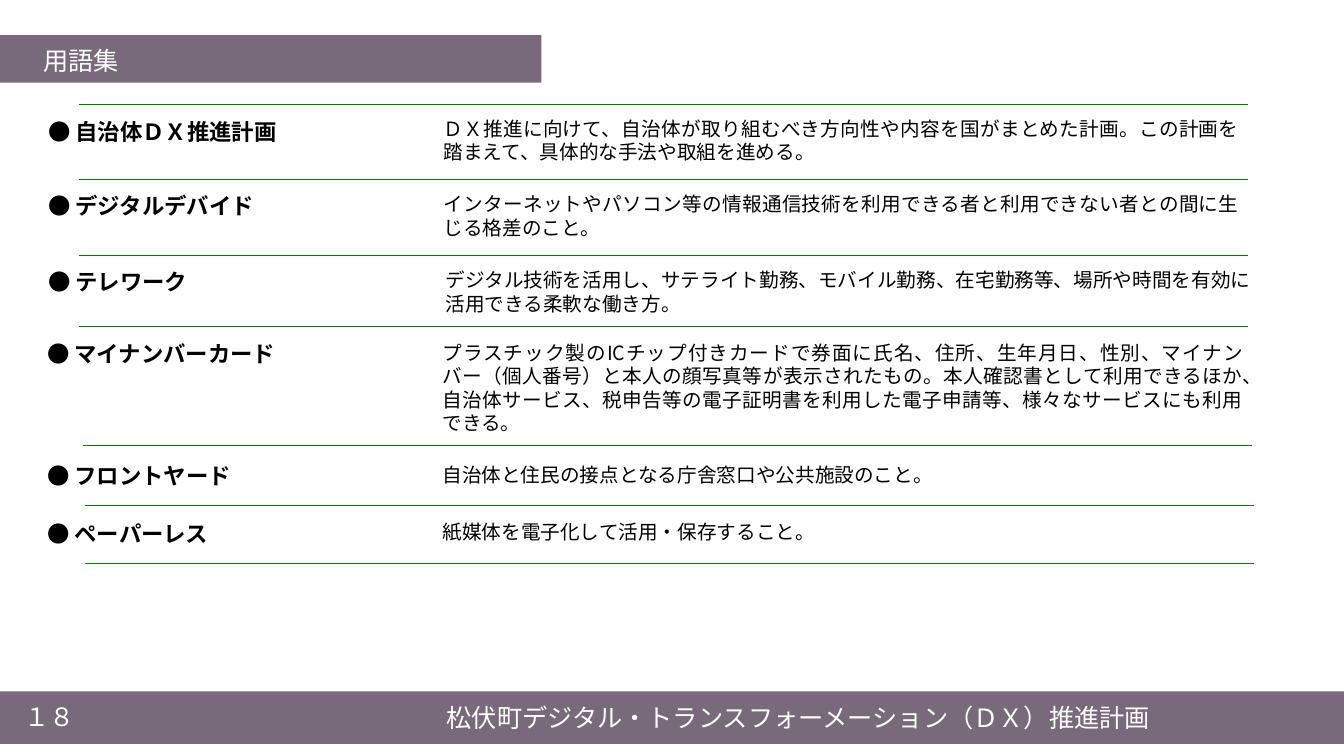
from lxml import etree
from pptx import Presentation
from pptx.dml.color import RGBColor
from pptx.enum.lang import MSO_LANGUAGE_ID as Language
from pptx.enum.shapes import MSO_CONNECTOR as Connector, MSO_SHAPE as Shape
from pptx.enum.text import MSO_ANCHOR as Anchor, MSO_AUTO_SIZE as AutoSize, PP_ALIGN as Align
from pptx.oxml.ns import qn
from pptx.util import Inches, Pt

FONT = "Noto Sans CJK JP"
COLORS = {"bar": "78697B", "rule": "008000", "text": "000000", "light": "FFFFFF"}


def write(shape, text, size, color, align=Align.LEFT, anchor=Anchor.TOP, bold=False):
    frame = shape.text_frame
    frame.text = text
    frame.word_wrap = True
    frame.auto_size = AutoSize.NONE
    frame.vertical_anchor = anchor
    for paragraph in frame.paragraphs:
        paragraph.alignment = align
        for run in paragraph.runs:
            font = run.font
            font.name = FONT
            font.size = Pt(size)
            font.bold = bold
            font.color.rgb = RGBColor.from_string(COLORS[color])
            font.language_id = Language.JAPANESE
            east_asian = etree.SubElement(font._element, qn("a:ea"))
            east_asian.set("typeface", FONT)


def add_bar(top, width, height):
    bar = slide.shapes.add_shape(Shape.RECTANGLE, 0, Inches(top), Inches(width), Inches(height))
    bar.shadow.inherit = False
    bar.fill.solid()
    bar.fill.fore_color.rgb = RGBColor.from_string(COLORS["bar"])
    bar.line.fill.background()
    return bar


presentation = Presentation()
presentation.slide_width = Inches(13.33)
presentation.slide_height = Inches(7.5)
slide = presentation.slides.add_slide(presentation.slide_layouts[5])

# Footer bar and page number
footer = add_bar(6.86, 13.33, 0.52)
write(footer, "松伏町デジタル・トランスフォーメーション（ＤＸ）推進計画", 18, "light", anchor=Anchor.MIDDLE)
footer.text_frame.margin_left = Inches(4.43)
page_number = slide.shapes.add_textbox(Inches(-0.01), Inches(6.87), Inches(1), Inches(0.48))
write(page_number, "１８", 18, "light", Align.CENTER, Anchor.MIDDLE)

# Title on its bar
add_bar(0.35, 5.37, 0.47)
title = slide.shapes.title
title.left, title.top, title.width, title.height = map(Inches, (0.33, 0.4, 4.56, 0.4))
write(title, "用語集", 18, "light")
slide.shapes._spTree.append(title._element)

# Glossary: term, term left and top, definition left, top, width and height, definition
entries = [
    ("自治体ＤＸ推進計画", 0.38, 1.12, 4.3, 1.11, 8.09, 0.57,
     "ＤＸ推進に向けて、自治体が取り組むべき方向性や内容を国がまとめた計画。"
     "この計画を踏まえて、具体的な手法や取組を進める。"),
    ("デジタルデバイド", 0.38, 1.86, 4.3, 1.86, 8.09, 0.57,
     "インターネットやパソコン等の情報通信技術を利用できる者と利用できない者との間に生じる格差のこと。"),
    ("テレワーク", 0.38, 2.61, 4.32, 2.61, 8.88, 0.57,
     "デジタル技術を活用し、サテライト勤務、モバイル勤務、在宅勤務等、場所や時間を有効に\n"
     "活用できる柔軟な働き方。"),
    ("マイナンバーカード", 0.37, 3.33, 4.29, 3.33, 8.14, 1.04,
     "プラスチック製のICチップ付きカードで券面に氏名、住所、生年月日、性別、マイナンバー（個人番号）と"
     "本人の顔写真等が表示されたもの。本人確認書として利用できるほか、自治体サービス、"
     "税申告等の電子証明書を利用した電子申請等、様々なサービスにも利用できる。"),
    ("フロントヤード", 0.37, 4.54, 4.29, 4.54, 8.14, 0.34,
     "自治体と住民の接点となる庁舎窓口や公共施設のこと。"),
    ("ペーパーレス", 0.37, 5.11, 4.29, 5.11, 8.25, 0.34,
     "紙媒体を電子化して活用・保存すること。"),
]
for term, term_left, term_top, left, top, width, height, definition in entries:
    term_box = slide.shapes.add_textbox(Inches(term_left), Inches(term_top), Inches(3.76), Inches(0.37))
    write(term_box, f"● {term}", 16, "text", bold=True)
    definition_box = slide.shapes.add_textbox(Inches(left), Inches(top), Inches(width), Inches(height))
    write(definition_box, definition, 14, "text", Align.JUSTIFY)

# Rules between the entries
rules = [(0.78, 1.04), (0.78, 1.78), (0.78, 2.53), (0.78, 3.24), (0.82, 4.42), (0.84, 5.01), (0.84, 5.59)]
for left, top in rules:
    rule = slide.shapes.add_connector(
        Connector.STRAIGHT, Inches(left), Inches(top), Inches(left + 11.6), Inches(top))
    rule.line.color.rgb = RGBColor.from_string(COLORS["rule"])
    rule.line.width = Pt(0.5)
    etree.SubElement(rule._element.spPr, qn("a:effectLst"))

presentation.save("out.pptx")
